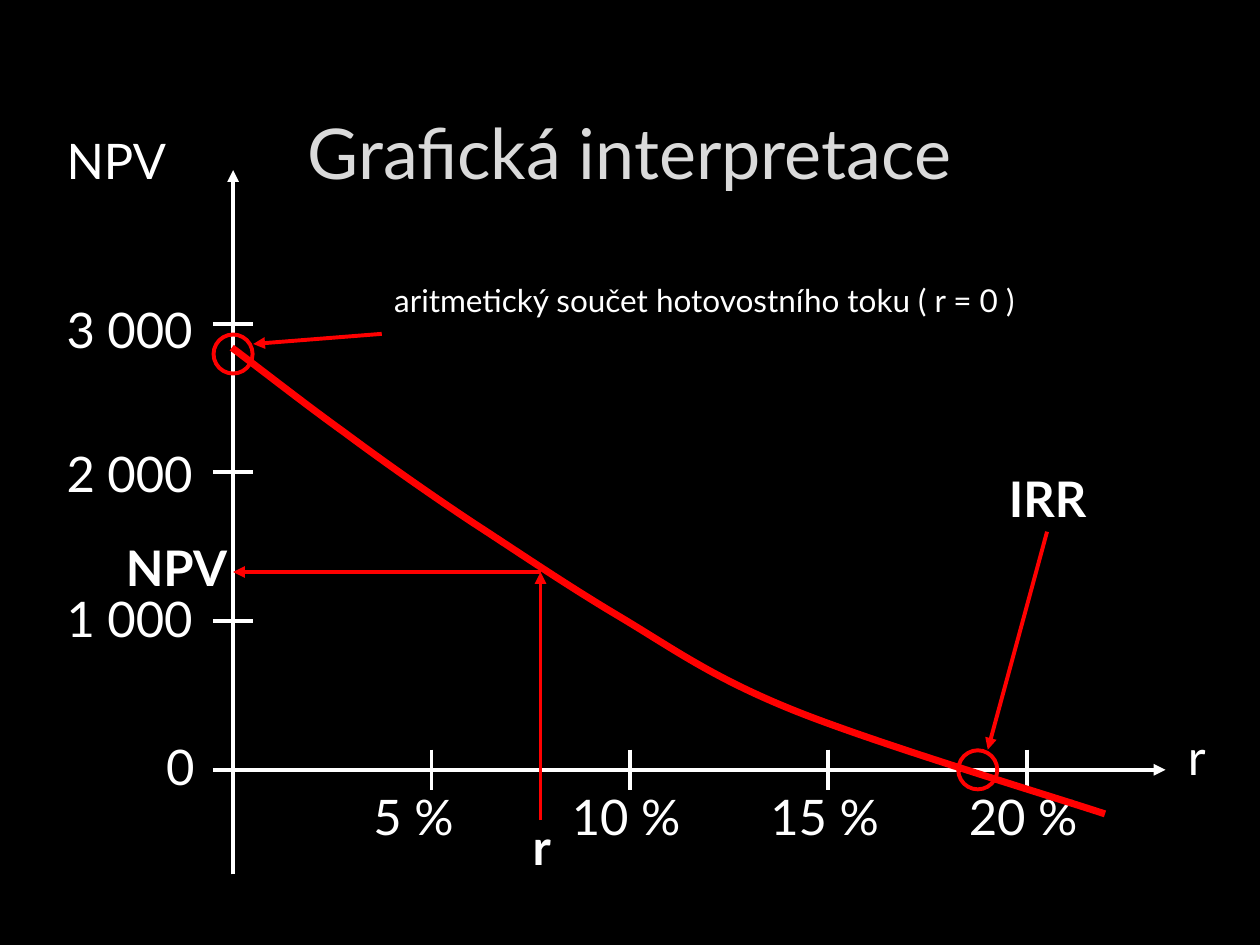
from lxml.etree import SubElement
from pptx import Presentation
from pptx.dml.color import RGBColor
from pptx.enum.shapes import MSO_CONNECTOR as Connector, MSO_SHAPE as Shape
from pptx.enum.text import MSO_ANCHOR as Anchor, MSO_AUTO_SIZE as AutoSize, PP_ALIGN as Align
from pptx.oxml.ns import qn
from pptx.util import Inches, Pt

BLACK = RGBColor(0x00, 0x00, 0x00)
WHITE = RGBColor(0xFF, 0xFF, 0xFF)
SILVER = RGBColor(0xDA, 0xDA, 0xDA)
RED = RGBColor(0xFF, 0x00, 0x00)
FONT = "Lato"
RATE_STEP, VALUE_STEP, LABEL_STEP = 1.575, 1.18, 1.145
TICK, RADIUS = 0.16, 0.155


def style(paragraph, size, color, bold=False):
    """Set the font of a whole paragraph."""
    font = paragraph.font
    font.name, font.size, font.bold = FONT, Pt(size), bold
    font.color.rgb = color


def add_label(slide, text, left, top, width, size=28, bold=False):
    """Add a one-line white label."""
    height = 0.57 if size == 28 else 0.4
    label = slide.shapes.add_textbox(Inches(left), Inches(top), Inches(width), Inches(height))
    frame = label.text_frame
    frame.word_wrap = True
    frame.auto_size = AutoSize.SHAPE_TO_FIT_TEXT
    frame.text = text
    style(frame.paragraphs[0], size, WHITE, bold)


def add_line(slide, start, end, color, arrow=False):
    """Draw a straight line, with an arrowhead at its end if asked."""
    line = slide.shapes.add_connector(
        Connector.STRAIGHT, *(Inches(value) for value in (*start, *end)))
    line.line.color.rgb = color
    line.line.width = Pt(2.25)
    if arrow:
        SubElement(line.line._get_or_add_ln(), qn("a:tailEnd"), type="triangle")
    SubElement(line._element.spPr, qn("a:effectLst"))


def add_ring(slide, x, y):
    """Circle a point of the curve."""
    ring = slide.shapes.add_shape(
        Shape.OVAL, Inches(x - RADIUS), Inches(y - RADIUS), Inches(2 * RADIUS), Inches(2 * RADIUS))
    ring.shadow.inherit = False
    ring.fill.background()
    ring.line.color.rgb = RED
    ring.line.width = Pt(2.25)


def add_title(slide, left, top, width, height):
    """Place the slide title in its box."""
    title = slide.shapes.title
    title.left, title.top = Inches(left), Inches(top)
    title.width, title.height = Inches(width), Inches(height)
    frame = title.text_frame
    frame.text = "Grafická interpretace"
    frame.vertical_anchor = Anchor.MIDDLE
    frame.paragraphs[0].alignment = Align.CENTER
    style(frame.paragraphs[0], 40, SILVER)


def add_axes(slide, left, top, width, height):
    """Draw both axes with their ticks and labels; the origin is bottom left."""
    base = top + height
    add_line(slide, (left, base + 0.83), (left, top), WHITE, arrow=True)
    add_line(slide, (left - TICK, base), (left + width, base), WHITE, arrow=True)
    for step, value in enumerate(("1 000", "2 000", "3 000"), 1):
        y = base - step * VALUE_STEP
        add_line(slide, (left - TICK, y), (left + TICK, y), WHITE)
        add_label(slide, value, left - 1.42, base - 0.345 - step * LABEL_STEP, 1.42)
    for step, rate in enumerate(("5 %", "10 %", "15 %", "20 %"), 1):
        x = left + step * RATE_STEP
        add_line(slide, (x, base - TICK), (x, base + TICK), WHITE)
        add_label(slide, rate, x - 0.56, base + 0.08, 1.18)
    add_label(slide, "0", left - 0.63, base - 0.31, 0.63)
    add_label(slide, "NPV", left - 1.42, top - 0.36, 1.42)
    add_label(slide, "r", left + width + 0.08, base - 0.39, 0.5)


def add_curve(slide, left, top, width, height):
    """Draw the NPV curve as Bezier segments measured from the origin."""
    base = top + height
    start, *controls = [
        (-0.01, 3.35),
        (0.14, 3.24), (0.56, 2.91), (0.88, 2.68),
        (1.19, 2.45), (1.53, 2.21), (1.89, 1.97),
        (2.26, 1.73), (2.64, 1.47), (3.06, 1.22),
        (3.48, 0.97), (3.79, 0.74), (4.43, 0.48),
        (5.07, 0.22), (6.4, -0.18), (6.92, -0.35),
    ]

    def place(point):
        return Inches(left + point[0]), Inches(base - point[1])

    builder = slide.shapes.build_freeform(*place(start))
    builder.add_line_segments([place(point) for point in controls], close=False)
    curve = builder.convert_to_shape()
    outline = curve._element.find(".//" + qn("a:path"))
    for index, line_to in enumerate(outline.findall(qn("a:lnTo"))):
        if index % 3 == 0:
            bezier = SubElement(outline, qn("a:cubicBezTo"))
        bezier.append(line_to[0])
        outline.remove(line_to)
    curve.shadow.inherit = False
    curve.fill.background()
    curve.line.color.rgb = RED
    curve.line.width = Pt(4)


def add_callouts(slide, left, top, width, height):
    """Mark the cash flow total, the IRR and one pair of r and NPV."""
    base = top + height
    add_ring(slide, left, base - 3.3)
    add_line(slide, (left + 1.18, base - 3.46), (left + TICK, base - 3.38), RED, arrow=True)
    add_label(slide, "aritmetický součet hotovostního toku ( r = 0 )",
              left + 1.18, base - 3.93, 5.35, size=18)

    add_ring(slide, left + 5.91, base)
    add_line(slide, (left + 6.46, base - 1.89), (left + 5.99, base - TICK), RED, arrow=True)
    add_label(slide, "IRR", left + 6.06, base - 2.44, 1.1, bold=True)

    crossing = (left + 2.44, base - 1.57)
    add_line(slide, (crossing[0], base + 0.4), crossing, RED, arrow=True)
    add_line(slide, crossing, (left, crossing[1]), RED, arrow=True)
    add_label(slide, "r", crossing[0] - 0.16, base + 0.32, 0.47, bold=True)
    add_label(slide, "NPV", left - 0.95, crossing[1] - 0.32, 1.26, bold=True)


def main():
    """Build and save the slide."""
    deck = Presentation()
    deck.slide_width, deck.slide_height = Inches(10), Inches(7.5)
    slide = deck.slides.add_slide(deck.slide_layouts[5])
    slide.background.fill.solid()
    slide.background.fill.fore_color.rgb = BLACK
    plot = (1.85, 1.35, 7.4, 4.76)
    add_title(slide, 0.75, 0.67, 8.49, 1.06)
    add_axes(slide, *plot)
    add_curve(slide, *plot)
    add_callouts(slide, *plot)
    deck.save("out.pptx")


if __name__ == "__main__":
    main()
